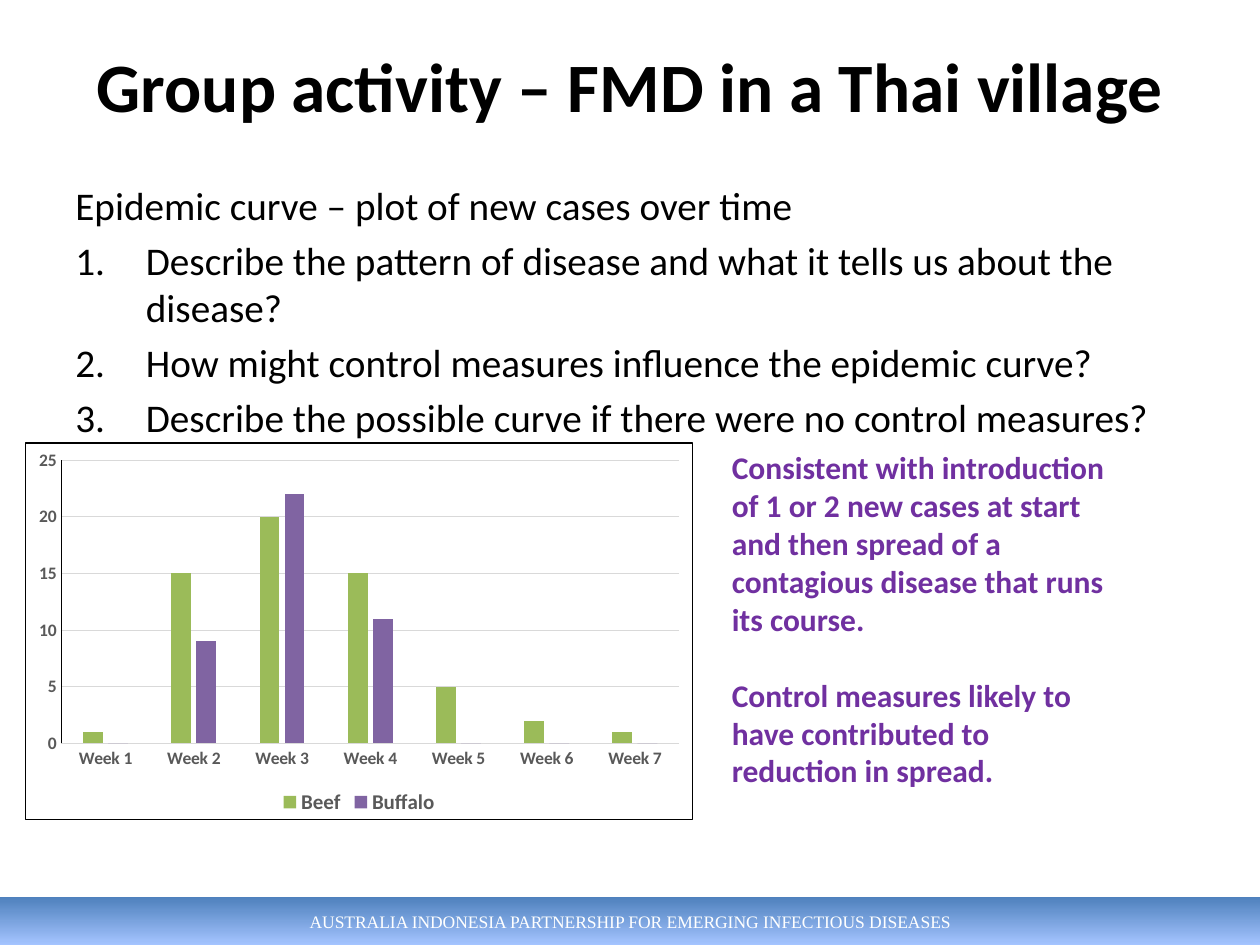
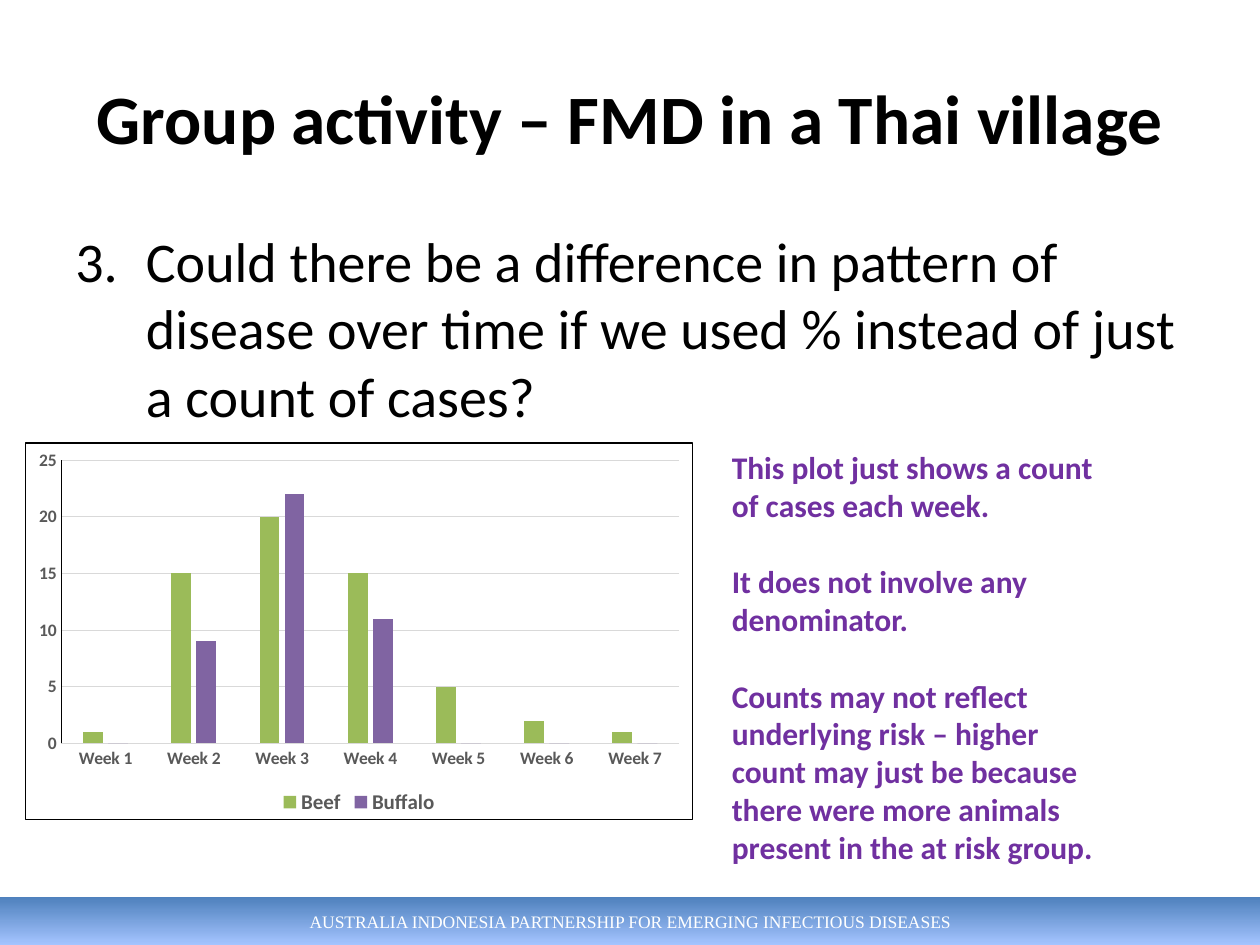
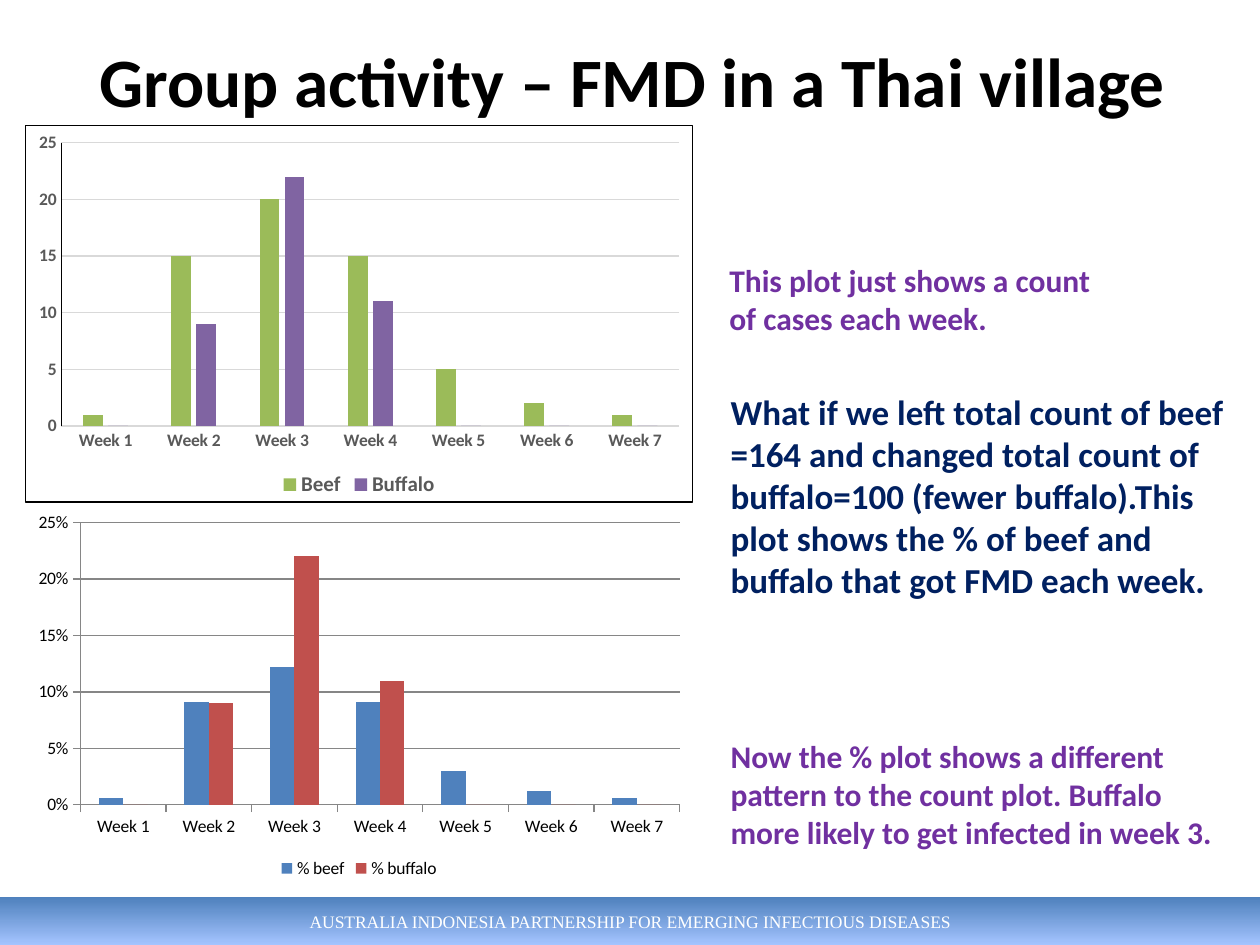
import dataclasses

import lxml.etree
import pptx
import pptx.chart.data
import pptx.dml.color
import pptx.enum.chart
import pptx.enum.shapes
import pptx.enum.text
import pptx.oxml.ns
import pptx.util

TITLE = "Group activity – FMD in a Thai village"
FOOTER = "AUSTRALIA INDONESIA PARTNERSHIP FOR EMERGING INFECTIOUS DISEASES"
COUNT_NOTE = "This plot just shows a count of cases each week."
WEEKS = [f"Week {number}" for number in range(1, 8)]
CASE_COUNTS = {"Beef": (1, 15, 20, 15, 5, 2, 1), "Buffalo": (0, 9, 22, 11, 0, 0, 0)}
CASE_SHARES = {
    "% beef": (0.006, 0.091, 0.122, 0.091, 0.03, 0.012, 0.006),
    "% buffalo": (0, 0.09, 0.22, 0.11, 0, 0, 0),
}

Pt = pptx.util.Pt
qn = pptx.oxml.ns.qn
Align = pptx.enum.text.PP_ALIGN
Anchor = pptx.enum.text.MSO_ANCHOR
Tick = pptx.enum.chart.XL_TICK_MARK


@dataclasses.dataclass(frozen=True)
class Theme:
    """Colours, fonts, type sizes in points and the slide grid."""
    black: str = "000000"
    white: str = "FFFFFF"
    answer: str = "7030A0"
    question: str = "002060"
    label: str = "595959"
    pale_line: str = "D9D9D9"
    axis_line: str = "868686"
    band: tuple = ("4F81BD", "A4C4FF")
    count_bars: tuple = ("9BBB59", "8064A2")
    share_bars: tuple = ("4F81BD", "C0504D")
    font: str = "Calibri"
    footer_font: str = "Times New Roman"
    title_size: float = 39.6
    list_size: float = 22.4
    large_list_size: float = 32
    note_size: float = 18
    question_size: float = 20
    footer_size: float = 10
    axis_size: float = 10
    legend_size: float = 12
    line_width: float = 0.75
    columns: int = 100
    rows: int = 75


@dataclasses.dataclass(frozen=True)
class ChartStyle:
    """What differs between the count chart and the percentage chart."""
    bars: tuple
    gap: int
    overlap: int
    number_format: str
    step: float
    top: float
    tick: object
    text: str
    bold: bool
    legend_size: float
    grid: str
    category_line: str
    value_line: str
    framed: bool


THEME = Theme()
COUNT_STYLE = ChartStyle(
    THEME.count_bars, 219, -27, "General", 5, 25, Tick.NONE, THEME.label, True,
    THEME.legend_size, THEME.pale_line, THEME.pale_line, THEME.black, True)
SHARE_STYLE = ChartStyle(
    THEME.share_bars, 150, 0, "0%", 0.05, 0.25, Tick.OUTSIDE, THEME.black, False,
    THEME.axis_size, THEME.axis_line, THEME.axis_line, THEME.axis_line, False)


def rgb(color):
    return pptx.dml.color.RGBColor.from_string(color)


def assign(target, **formats):
    for name, value in formats.items():
        setattr(target, name, value)


def set_font(font, size, color, bold=False, name=THEME.font):
    assign(font, size=Pt(size), bold=bold, name=name)
    font.color.rgb = rgb(color)


def set_line(line, color):
    line.width = Pt(THEME.line_width)
    line.color.rgb = rgb(color)


class Page:
    """The deck, its theme and the slide being built."""

    def __init__(self, theme):
        self.theme = theme
        self.deck = pptx.Presentation()
        assign(self.deck, slide_width=pptx.util.Inches(10),
               slide_height=pptx.util.Inches(7.5))
        self.slide = None

    def place(self, left, top, width, height):
        """Turn grid columns and rows into lengths."""
        column = self.deck.slide_width / self.theme.columns
        row = self.deck.slide_height / self.theme.rows
        return [round(count * unit) for count, unit in
                zip((left, top, width, height), (column, row, column, row))]

    def start(self, title_area):
        self.slide = self.deck.slides.add_slide(self.deck.slide_layouts[5])
        self.footer()
        self.title(title_area)

    def fill_frame(self, frame, anchor):
        assign(frame, word_wrap=True, vertical_anchor=anchor,
               auto_size=pptx.enum.text.MSO_AUTO_SIZE.NONE)

    def title(self, area):
        box = self.slide.shapes.title
        for name, value in zip(("left", "top", "width", "height"), self.place(*area)):
            setattr(box, name, value)
        box.text = TITLE
        self.fill_frame(box.text_frame, Anchor.MIDDLE)
        para = box.text_frame.paragraphs[0]
        para.alignment = Align.CENTER
        set_font(para.runs[0].font, self.theme.title_size, self.theme.black, True)

    def footer(self):
        band = self.slide.shapes.add_shape(
            pptx.enum.shapes.MSO_SHAPE.RECTANGLE, *self.place(0, 71.2, 100, 3.8))
        band.shadow.inherit = False
        band.line.fill.background()
        band.fill.gradient()
        band.fill.gradient_angle = 270
        for stop, color in zip(band.fill.gradient_stops, self.theme.band):
            stop.color.rgb = rgb(color)
        band.text = FOOTER
        self.fill_frame(band.text_frame, Anchor.MIDDLE)
        para = band.text_frame.paragraphs[0]
        para.alignment = Align.CENTER
        set_font(para.runs[0].font, self.theme.footer_size, self.theme.white,
                 name=self.theme.footer_font)

    def text(self, area, lines, size, color, bold=False, gap=0.0, first_number=None,
             lead=0):
        """Add paragraphs; those after the lead ones are numbered if asked."""
        box = self.slide.shapes.add_textbox(*self.place(*area))
        frame = box.text_frame
        self.fill_frame(frame, Anchor.TOP)
        for index, line in enumerate(lines):
            para = frame.add_paragraph() if index else frame.paragraphs[0]
            if index:
                para.space_before = Pt(round(size * gap, 1))
            if first_number and index >= lead:
                self.number(para, first_number)
            span = para.add_run()
            span.text = line
            set_font(span.font, size, color, bold)

    def number(self, para, first_number):
        indent = self.place(5.6, 0, 0, 0)[0]
        properties = para._p.get_or_add_pPr()
        properties.set("marL", str(indent))
        properties.set("indent", str(-indent))
        bullet = lxml.etree.SubElement(
            properties, qn("a:buAutoNum"), type="arabicPeriod")
        if first_number > 1:
            bullet.set("startAt", str(first_number))

    def note(self, area, *lines):
        """Add a bold answer whose paragraphs stand one line apart."""
        self.text(area, lines, self.theme.note_size, self.theme.answer, True, gap=1.22)

    def chart(self, top, values, style):
        data = pptx.chart.data.CategoryChartData(number_format=style.number_format)
        data.categories = WEEKS
        for name, numbers in values.items():
            data.add_series(name, numbers)
        chart = self.slide.shapes.add_chart(
            pptx.enum.chart.XL_CHART_TYPE.COLUMN_CLUSTERED,
            *self.place(2, top, 53, 30), data).chart
        assign(chart, has_title=False, has_legend=True)
        set_font(chart.font, self.theme.axis_size, self.theme.black)
        assign(chart.legend, include_in_layout=False,
               position=pptx.enum.chart.XL_LEGEND_POSITION.BOTTOM)
        set_font(chart.legend.font, style.legend_size, style.text, style.bold)

        # Bars
        plot = chart.plots[0]
        assign(plot, gap_width=style.gap, overlap=style.overlap,
               vary_by_categories=False)
        for series, color in zip(plot.series, style.bars):
            series.format.fill.solid()
            series.format.fill.fore_color.rgb = rgb(color)

        # Axes
        for axis, color in ((chart.category_axis, style.category_line),
                            (chart.value_axis, style.value_line)):
            assign(axis, major_tick_mark=style.tick, minor_tick_mark=Tick.NONE)
            set_font(axis.tick_labels.font, self.theme.axis_size, style.text, style.bold)
            set_line(axis.format.line, color)
        assign(chart.value_axis, minimum_scale=0, maximum_scale=style.top,
               major_unit=style.step, has_major_gridlines=True)
        set_line(chart.value_axis.major_gridlines.format.line, style.grid)
        assign(chart.value_axis.tick_labels, number_format=style.number_format,
               number_format_is_linked=False)
        self.chart_area(chart, style.framed)

    def chart_area(self, chart, framed):
        """Give the chart a white, outlined background, or none at all."""
        area = lxml.etree.Element(qn("c:spPr"))
        line = lxml.etree.Element(qn("a:ln"), w=str(Pt(self.theme.line_width)))
        for parent, color in ((area, self.theme.white), (line, self.theme.black)):
            if framed:
                fill = lxml.etree.SubElement(parent, qn("a:solidFill"))
                lxml.etree.SubElement(fill, qn("a:srgbClr"), val=color)
            else:
                lxml.etree.SubElement(parent, qn("a:noFill"))
        area.append(line)
        chart.element.find(qn("c:chart")).addnext(area)


def main():
    theme = THEME
    page = Page(theme)

    # Epidemic curve
    page.start((5, 2.1, 90, 9.3))
    page.text((5, 13.9, 90, 18.1), (
        "Epidemic curve – plot of new cases over time",
        "Describe the pattern of disease and what it tells us about the disease?",
        "How might control measures influence the epidemic curve?",
        "Describe the possible curve if there were no control measures?",
    ), theme.list_size, theme.black, gap=0.2, first_number=1, lead=1)
    page.chart(35.1, CASE_COUNTS, COUNT_STYLE)
    page.note(
        (57.1, 35.1, 32.3, 28.3),
        "Consistent with introduction of 1 or 2 new cases at start and then spread "
        "of a contagious disease that runs its course.",
        "Control measures likely to have contributed to reduction in spread.")

    # Counts or percentages
    page.start((5, 3, 90, 12.5))
    page.text((5, 17.5, 90, 20), (
        "Could there be a difference in pattern of disease over time if we used % "
        "instead of just a count of cases?",
    ), theme.large_list_size, theme.black, first_number=3)
    page.chart(35.1, CASE_COUNTS, COUNT_STYLE)
    page.note(
        (57.1, 35.1, 32.3, 34.3),
        COUNT_NOTE,
        "It does not involve any denominator.",
        "Counts may not reflect underlying risk – higher count may just be because "
        "there were more animals present in the at risk group.")

    # Both plots compared
    page.start((5.2, 2.1, 90, 8.5))
    page.chart(9.9, CASE_COUNTS, COUNT_STYLE)
    page.note((56.9, 20.2, 32.3, 7.1), COUNT_NOTE)
    page.note(
        (57, 58, 41.1, 10.1),
        "Now the % plot shows a different pattern to the count plot. Buffalo more "
        "likely to get infected in week 3.")
    page.text((57, 30.5, 41.1, 21.2), (
        "What if we left total count of beef =164 and changed total count of "
        "buffalo=100 (fewer buffalo).This plot shows the % of beef and buffalo that "
        "got FMD each week.",
    ), theme.question_size, theme.question, True)
    page.chart(40.1, CASE_SHARES, SHARE_STYLE)

    page.deck.save("out.pptx")


if __name__ == "__main__":
    main()
